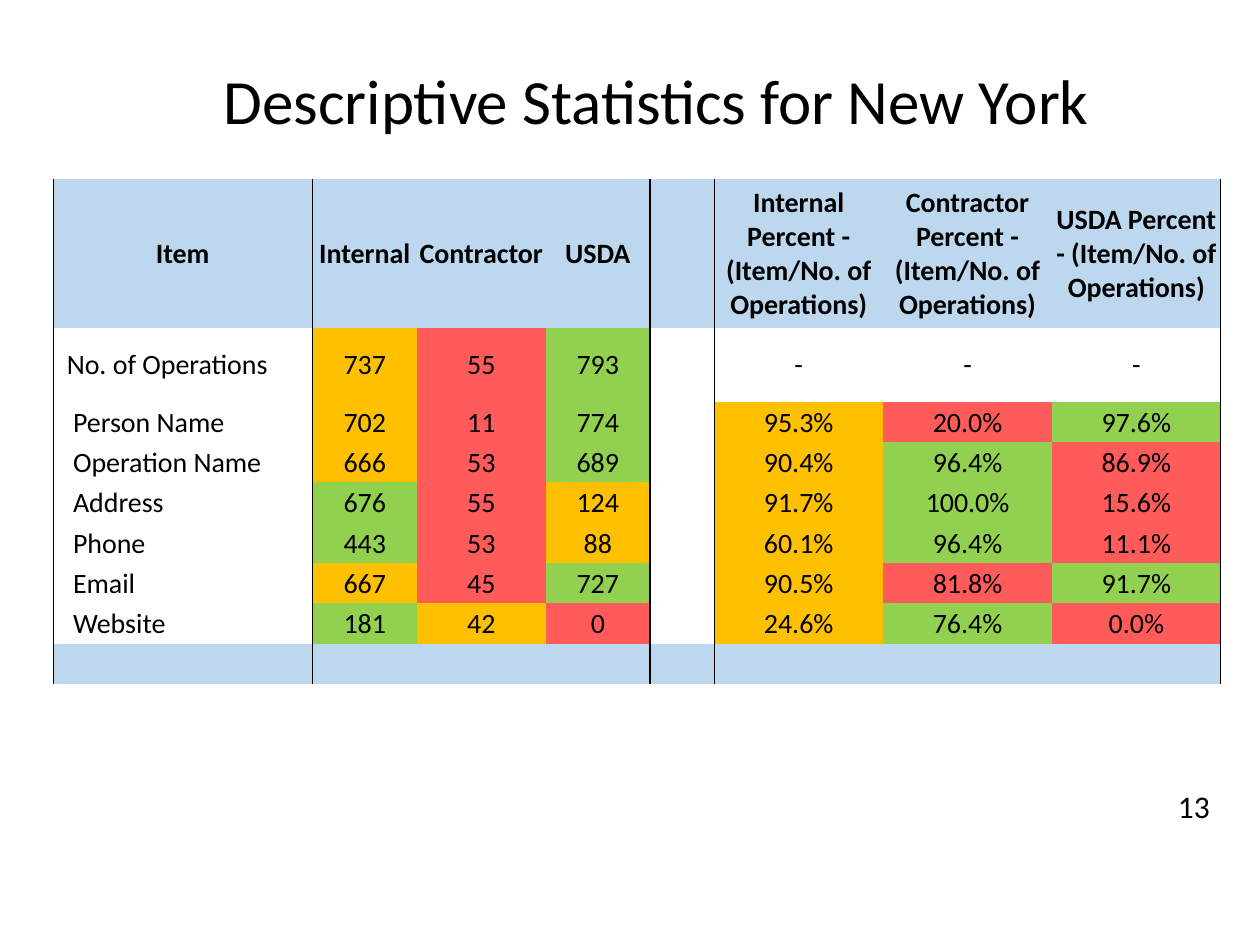
"""Builds the New York descriptive statistics slide with its coloured table."""
from lxml import etree
from pptx import Presentation
from pptx import util as u
from pptx.dml.color import RGBColor
from pptx.enum import text
from pptx.oxml import ns

HUES = {"b": "BDD7EE", "o": "FFC000", "r": "FF5B5B", "g": "92D050", "ink": "000000"}
MID, LEFT = text.PP_ALIGN.CENTER, text.PP_ALIGN.LEFT


def write(frame, words, size=16, bold=False, align=MID):
    para = frame.paragraphs[0]
    para.alignment = align
    run = para.add_run()
    run.text = words
    run.font.name, run.font.size, run.font.bold = "Calibri", u.Pt(size), bold
    run.font.color.rgb = RGBColor.from_string(HUES["ink"])


def edge(cell, sides):
    for spot, side in enumerate("LRTB"):
        line = etree.Element(ns.qn(f"a:ln{side}"))
        if side in sides:
            line.set("w", str(u.Pt(sides[side])))
            fill = etree.SubElement(line, ns.qn("a:solidFill"))
            etree.SubElement(fill, ns.qn("a:srgbClr"), val=HUES["ink"])
        else:
            etree.SubElement(line, ns.qn("a:noFill"))
        cell._tc.get_or_add_tcPr().insert(spot, line)


deck = Presentation()
deck.slide_width, deck.slide_height = u.Inches(10), u.Inches(7.5)
slide = deck.slides.add_slide(deck.slide_layouts[5])

title = slide.shapes.title
title.left, title.top = u.Inches(1), u.Inches(0.33)
title.width, title.height = u.Inches(8.42), u.Inches(0.92)
title.text_frame.vertical_anchor = text.MSO_ANCHOR.MIDDLE
write(title.text_frame, "Descriptive Statistics for New York", size=36)

ratio = "Percent - (Item/No. of Operations)"
heads = ["Item", "Internal", "Contractor", "USDA", "",
         f"Internal {ratio}", f"Contractor {ratio}", f"USDA {ratio}"]
rows = [
    (heads, "bbbbbbbb"),
    (["No. of Operations", "737", "55", "793", "", "-", "-", "-"], " org    "),
    (["Person Name", "702", "11", "774", "", "95.3%", "20.0%", "97.6%"], " org org"),
    (["Operation Name", "666", "53", "689", "", "90.4%", "96.4%", "86.9%"], " org ogr"),
    (["Address", "676", "55", "124", "", "91.7%", "100.0%", "15.6%"], " gro ogr"),
    (["Phone", "443", "53", "88", "", "60.1%", "96.4%", "11.1%"], " gro ogr"),
    (["Email", "667", "45", "727", "", "90.5%", "81.8%", "91.7%"], " org org"),
    (["Website", "181", "42", "0", "", "24.6%", "76.4%", "0.0%"], " gor ogr"),
    ([""] * 8, "bbbbbbbb"),
]
wide = [2.06, 0.83, 1.02, 0.83, 0.51] + [1.34] * 3
tall = [1.18, 0.59] + [0.32] * 7
rules = {0: {"L": 0.5, "R": 0.5}, 1: {"L": 0.5}, 3: {"R": 1},
         4: {"L": 1, "R": 1}, 5: {"L": 1}, 7: {"R": 0.5}}

grid = slide.shapes.add_table(len(rows), len(wide), u.Inches(0.42), u.Inches(1.42),
                              u.Inches(9.25), u.Inches(4)).table
grid.first_row = grid.horz_banding = False
for col, width in zip(grid.columns, wide):
    col.width = u.Inches(width)
for row, height in zip(grid.rows, tall):
    row.height = u.Inches(height)

for r, (words, tints) in enumerate(rows):
    for c, (word, tint) in enumerate(zip(words, tints)):
        cell = grid.cell(r, c)
        label = c == 0 and tint == " "
        indent = (0.11 if r == 1 else 0.16) if label else 0.01
        cell.margin_left = u.Inches(indent)
        cell.margin_right = cell.margin_top = u.Inches(0.01)
        cell.margin_bottom = 0
        cell.vertical_anchor = text.MSO_ANCHOR.MIDDLE
        if tint == " ":
            cell.fill.background()
        else:
            cell.fill.solid()
            cell.fill.fore_color.rgb = RGBColor.from_string(HUES[tint])
        edge(cell, rules.get(c, {}))
        if word:
            write(cell.text_frame, word, bold=r == 0, align=LEFT if label else MID)

page = slide.shapes.add_textbox(u.Inches(9.25), u.Inches(6.2), u.Inches(0.5), u.Inches(0.4))
page.text_frame.word_wrap = True
write(page.text_frame, "13", size=18, align=LEFT)

deck.save("out.pptx")
